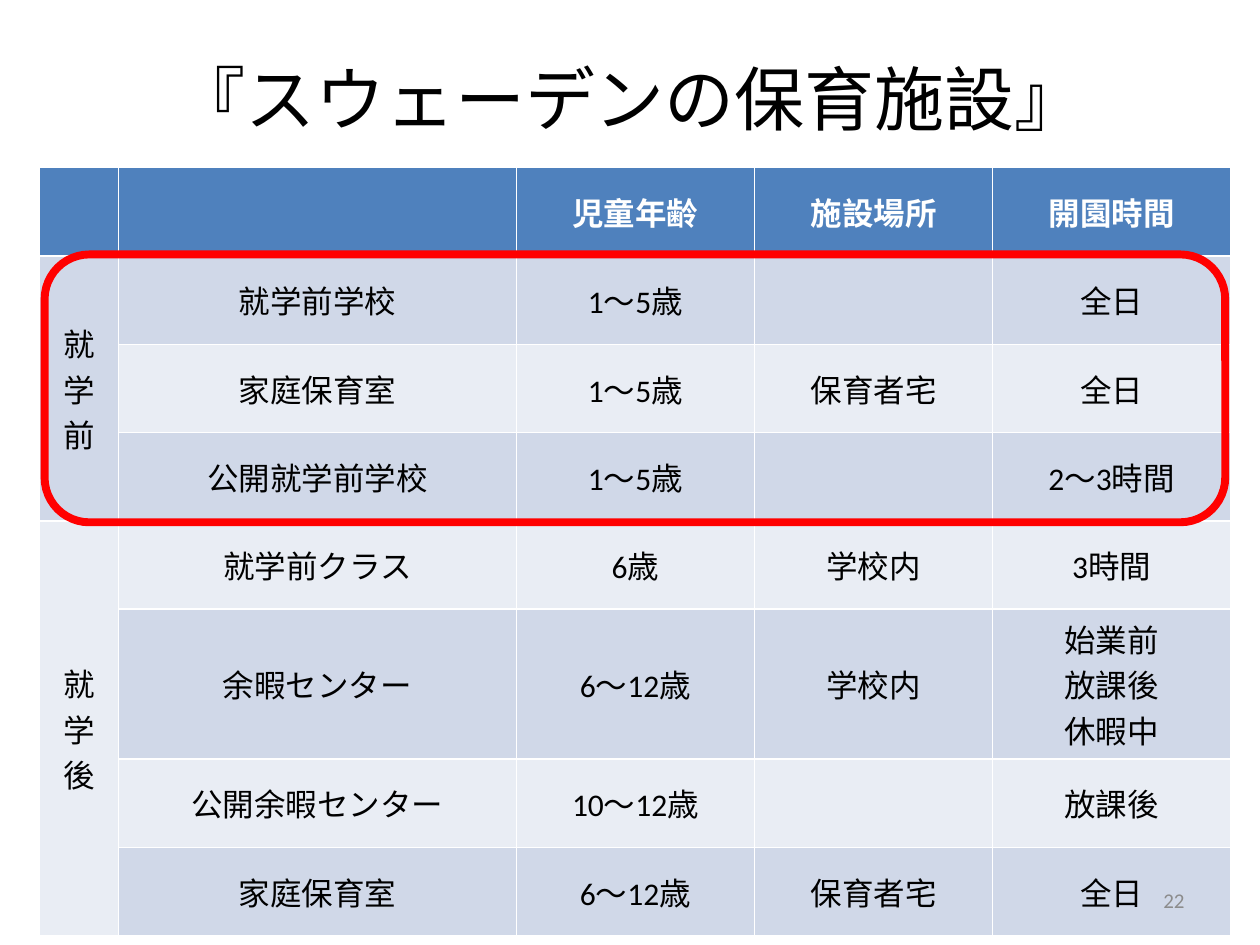
from dataclasses import dataclass

from pptx import Presentation
from pptx.dml.color import RGBColor
from pptx.enum.shapes import MSO_SHAPE
from pptx.enum.text import MSO_ANCHOR, PP_ALIGN
from pptx.slide import Slide
from pptx.table import Table
from pptx.text.text import TextFrame
from pptx.util import Cm, Pt

FONT = "Calibri"
WHITE = RGBColor(0xFF, 0xFF, 0xFF)
BLACK = RGBColor(0x00, 0x00, 0x00)
GRAY = RGBColor(0x8C, 0x8C, 0x8C)
RED = RGBColor(0xFF, 0x00, 0x00)
HEADER_BLUE = RGBColor(0x4F, 0x81, 0xBD)
BAND_DARK = RGBColor(0xD0, 0xD8, 0xE8)
BAND_LIGHT = RGBColor(0xE9, 0xED, 0xF4)

COLUMN_WIDTHS = (1.59, 8.02, 4.8, 4.8, 4.8)
ROW_HEIGHT = 1.78
MULTILINE_ROW_HEIGHT = 3.02
HEADINGS = ("", "", "児童年齢", "施設場所", "開園時間")


@dataclass(frozen=True)
class Box:
    left: float
    top: float
    width: float
    height: float

    def lengths(self) -> tuple[Cm, Cm, Cm, Cm]:
        return Cm(self.left), Cm(self.top), Cm(self.width), Cm(self.height)


@dataclass(frozen=True)
class TextStyle:
    size: int
    color: RGBColor
    bold: bool = False
    align: PP_ALIGN = PP_ALIGN.CENTER


@dataclass(frozen=True)
class Facility:
    name: str
    ages: str
    place: str
    hours: str

    def row_height(self) -> float:
        return MULTILINE_ROW_HEIGHT if "\n" in self.hours else ROW_HEIGHT


@dataclass(frozen=True)
class Stage:
    name: str
    facilities: tuple[Facility, ...]


TITLE = TextStyle(40, BLACK)
HEADING = TextStyle(18, WHITE, bold=True)
BODY = TextStyle(18, BLACK)
PAGE_NUMBER = TextStyle(12, GRAY, align=PP_ALIGN.RIGHT)

STAGES = (
    Stage("就学前", (
        Facility("就学前学校", "1～5歳", "", "全日"),
        Facility("家庭保育室", "1～5歳", "保育者宅", "全日"),
        Facility("公開就学前学校", "1～5歳", "", "2～3時間"),
    )),
    Stage("就学後", (
        Facility("就学前クラス", "6歳", "学校内", "3時間"),
        Facility("余暇センター", "6～12歳", "学校内", "始業前\n放課後\n休暇中"),
        Facility("公開余暇センター", "10～12歳", "", "放課後"),
        Facility("家庭保育室", "6～12歳", "保育者宅", "全日"),
    )),
)


def write_text(frame: TextFrame, text: str, style: TextStyle) -> None:
    for index, line in enumerate(text.split("\n")):
        para = frame.add_paragraph() if index else frame.paragraphs[0]
        para.alignment = style.align
        span = para.add_run()
        span.text = line
        span.font.name = FONT
        span.font.size = Pt(style.size)
        span.font.bold = style.bold
        span.font.color.rgb = style.color


def add_text(page: Slide, box: Box, text: str, style: TextStyle) -> None:
    frame = page.shapes.add_textbox(*box.lengths()).text_frame
    frame.word_wrap = True
    frame.vertical_anchor = MSO_ANCHOR.MIDDLE
    write_text(frame, text, style)


def fill_cell(table: Table, row: int, column: int, text: str,
              fill: RGBColor, style: TextStyle) -> None:
    cell = table.cell(row, column)
    cell.fill.solid()
    cell.fill.fore_color.rgb = fill
    cell.vertical_anchor = MSO_ANCHOR.MIDDLE
    if text:
        write_text(cell.text_frame, text, style)


def add_facility_table(page: Slide, left: float, top: float) -> None:
    heights = [ROW_HEIGHT] + [facility.row_height() for stage in STAGES
                              for facility in stage.facilities]
    box = Box(left, top, sum(COLUMN_WIDTHS), sum(heights))
    table = page.shapes.add_table(len(heights), len(COLUMN_WIDTHS), *box.lengths()).table
    for column, width in zip(table.columns, COLUMN_WIDTHS):
        column.width = Cm(width)
    for row, height in zip(table.rows, heights):
        row.height = Cm(height)
    for column, heading in enumerate(HEADINGS):
        fill_cell(table, 0, column, heading, HEADER_BLUE, HEADING)

    row = 1
    for stage in STAGES:
        last_row = row + len(stage.facilities) - 1
        table.cell(row, 0).merge(table.cell(last_row, 0))
        for offset, facility in enumerate(stage.facilities):
            fill = BAND_DARK if row % 2 else BAND_LIGHT
            values = ("" if offset else stage.name, facility.name,
                      facility.ages, facility.place, facility.hours)
            for column, value in enumerate(values):
                fill_cell(table, row, column, value, fill, BODY)
            row += 1


def add_highlight(page: Slide, box: Box) -> None:
    frame = page.shapes.add_shape(MSO_SHAPE.ROUNDED_RECTANGLE, *box.lengths())
    frame.shadow.inherit = False
    frame.fill.background()
    frame.line.color.rgb = RED
    frame.line.width = Pt(4.5)


def main() -> None:
    deck = Presentation()
    deck.slide_width, deck.slide_height = Cm(25.4), Cm(19.05)
    page = deck.slides.add_slide(deck.slide_layouts[6])
    add_text(page, Box(1.27, 0, 22.86, 3.94), "『スウェーデンの保育施設』", TITLE)
    add_facility_table(page, 0.8, 3.38)
    add_highlight(page, Box(0.9, 5.13, 23.8, 5.4))
    add_text(page, Box(18.2, 17.65, 5.93, 1.01), "22", PAGE_NUMBER)
    deck.save("out.pptx")


if __name__ == "__main__":
    main()
